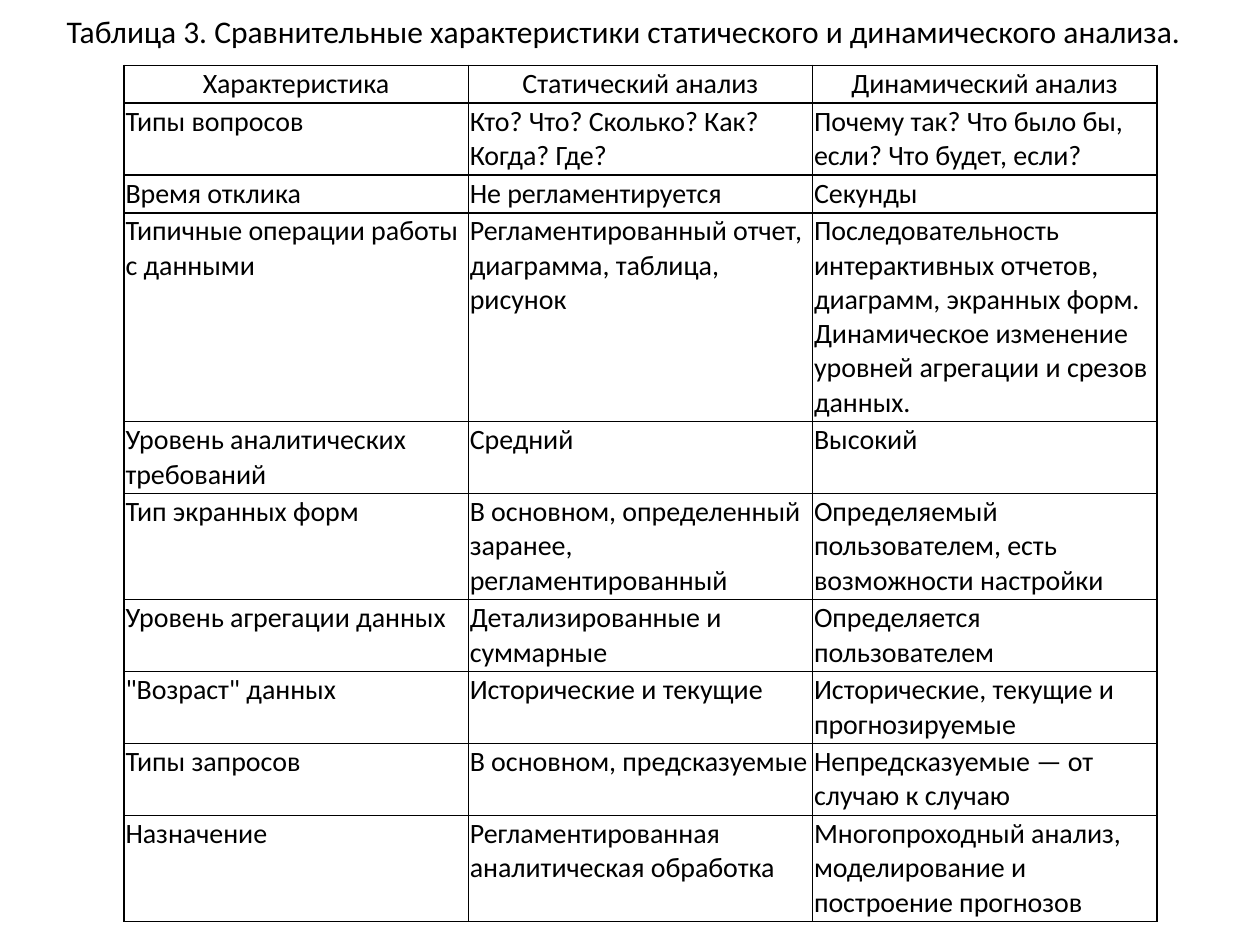
import pptx
import pptx.dml.color
import pptx.enum.text
import pptx.oxml.ns
import pptx.util
from lxml import etree
from pptx.util import Cm

COLORS = {"text": "000000", "border": "000000", "cell": "FFFFFF"}

HEADER = ["Характеристика", "Статический анализ", "Динамический анализ"]

ROWS = [
    (2, "Типы вопросов", "Кто? Что? Сколько? Как? Когда? Где?",
     "Почему так? Что было бы, если? Что будет, если?"),
    (1, "Время отклика", "Не регламентируется", "Секунды"),
    (6, "Типичные операции работы с данными",
     "Регламентированный отчет, диаграмма, таблица, рисунок",
     "Последовательность интерактивных отчетов, диаграмм, экранных форм. "
     "Динамическое изменение уровней агрегации и срезов данных."),
    (2, "Уровень аналитических требований", "Средний", "Высокий"),
    (3, "Тип экранных форм", "В основном, определенный заранее, регламентированный",
     "Определяемый пользователем, есть возможности настройки"),
    (2, "Уровень агрегации данных", "Детализированные и суммарные",
     "Определяется пользователем"),
    (2, "\"Возраст\" данных", "Исторические и текущие",
     "Исторические, текущие и прогнозируемые"),
    (2, "Типы запросов", "В основном, предсказуемые",
     "Непредсказуемые — от случаю к случаю"),
    (3, "Назначение", "Регламентированная аналитическая обработка",
     "Многопроходный анализ, моделирование и построение прогнозов"),
]


class SlideBuilder:
    font_name = "Calibri"
    title_size = 18
    cell_size = 16
    cell_margin = Cm(0.03)
    line_height = 0.69
    row_padding = 0.07

    def __init__(self, slide):
        self.slide = slide

    def style_paragraph(self, paragraph, size, alignment):
        paragraph.alignment = alignment
        paragraph.font.name = self.font_name
        paragraph.font.size = pptx.util.Pt(size)
        paragraph.font.color.rgb = pptx.dml.color.RGBColor.from_string(COLORS["text"])

    def title(self, text, left, top, width, height):
        shape = self.slide.shapes.title
        shape.left, shape.top, shape.width, shape.height = left, top, width, height
        frame = shape.text_frame
        frame.text = text
        frame.word_wrap = True
        frame.auto_size = pptx.enum.text.MSO_AUTO_SIZE.SHAPE_TO_FIT_TEXT
        frame.vertical_anchor = pptx.enum.text.MSO_ANCHOR.TOP
        self.style_paragraph(frame.paragraphs[0], self.title_size,
                             pptx.enum.text.PP_ALIGN.LEFT)

    def borders(self, cell):
        properties = cell._tc.get_or_add_tcPr()
        qualified = pptx.oxml.ns.qn
        for side in ("lnL", "lnR", "lnT", "lnB"):
            line = etree.SubElement(properties, qualified(f"a:{side}"),
                                    w=str(pptx.util.Pt(1)))
            fill = etree.SubElement(line, qualified("a:solidFill"))
            etree.SubElement(fill, qualified("a:srgbClr"), val=COLORS["border"])

    def cell(self, cell, text, alignment, anchor):
        self.borders(cell)
        cell.fill.solid()
        cell.fill.fore_color.rgb = pptx.dml.color.RGBColor.from_string(COLORS["cell"])
        cell.margin_left = cell.margin_right = self.cell_margin
        cell.margin_top = cell.margin_bottom = self.cell_margin
        cell.vertical_anchor = anchor
        cell.text = text
        self.style_paragraph(cell.text_frame.paragraphs[0], self.cell_size, alignment)

    def table(self, header, rows, left, top, column_width):
        all_rows = [(1, *header), *rows]
        heights = [Cm(lines * self.line_height + self.row_padding)
                   for lines, *_ in all_rows]
        shape = self.slide.shapes.add_table(
            len(all_rows), len(header), left, top,
            column_width * len(header), sum(heights))
        table = shape.table
        table.first_row = table.horz_banding = False
        for column in table.columns:
            column.width = column_width
        for index, (_, *texts) in enumerate(all_rows):
            table.rows[index].height = heights[index]
            if index == 0:
                alignment = pptx.enum.text.PP_ALIGN.CENTER
                anchor = pptx.enum.text.MSO_ANCHOR.MIDDLE
            else:
                alignment = pptx.enum.text.PP_ALIGN.LEFT
                anchor = pptx.enum.text.MSO_ANCHOR.TOP
            for column, text in enumerate(texts):
                self.cell(table.cell(index, column), text, alignment, anchor)


def main():
    presentation = pptx.Presentation()
    presentation.slide_width = Cm(25.4)
    presentation.slide_height = Cm(19.05)
    title_only = presentation.slide_layouts[5]
    builder = SlideBuilder(presentation.slides.add_slide(title_only))
    builder.title("Таблица 3. Сравнительные характеристики статического "
                  "и динамического анализа.",
                  Cm(1.09), Cm(0.11), Cm(23.19), Cm(1.02))
    builder.table(HEADER, ROWS, Cm(2.5), Cm(1.32), Cm(6.94))
    presentation.save("out.pptx")


if __name__ == "__main__":
    main()
